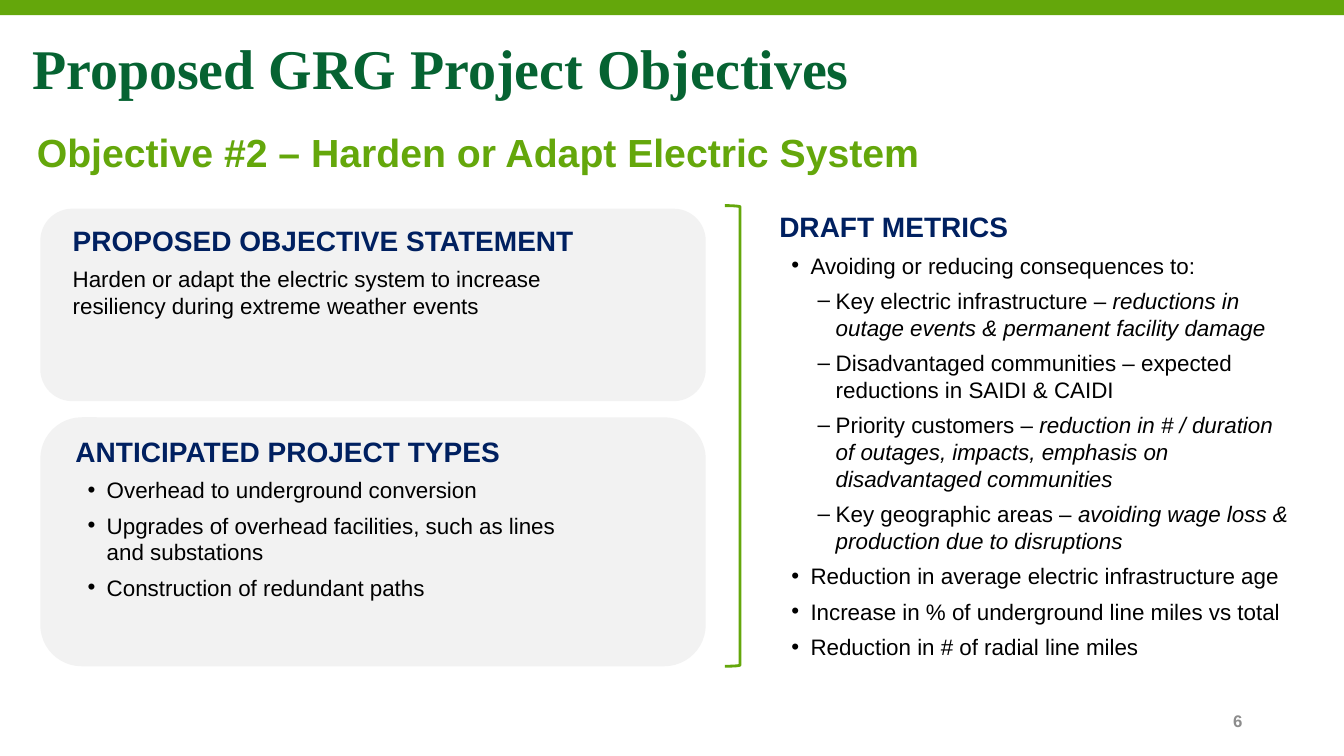
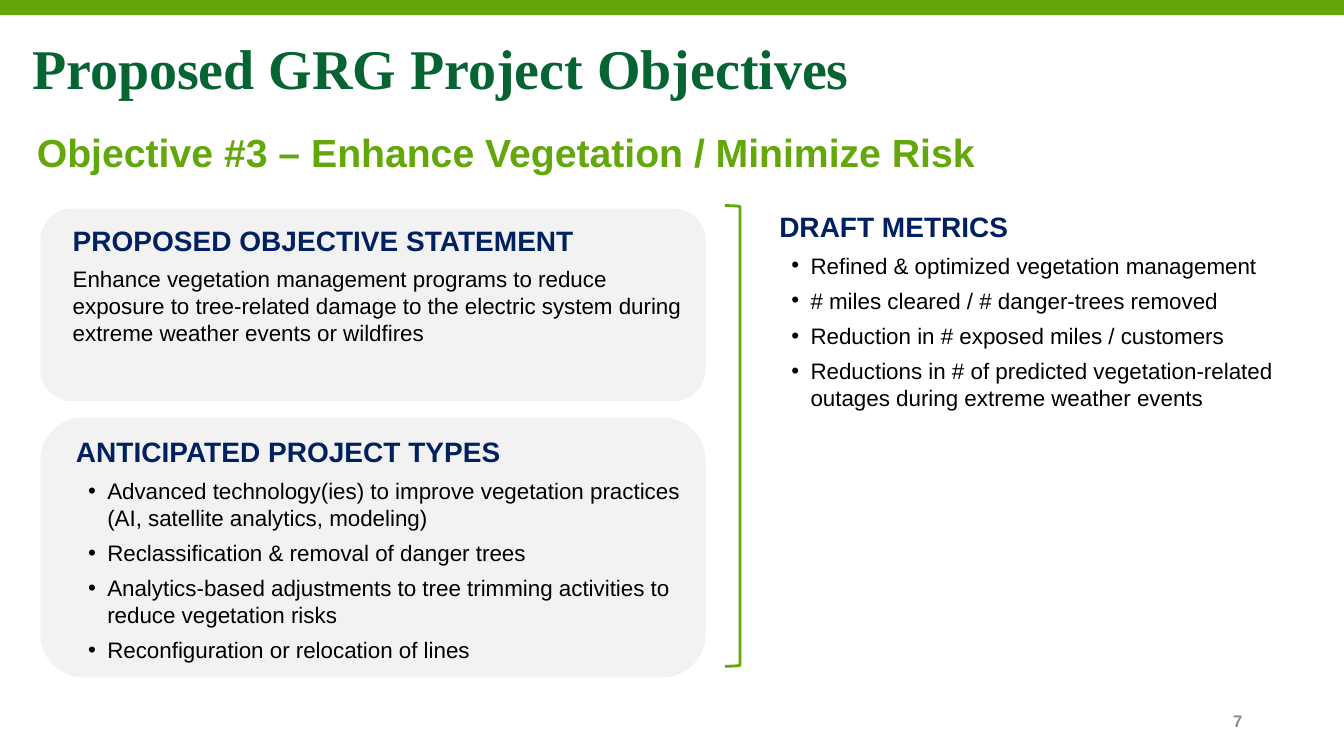
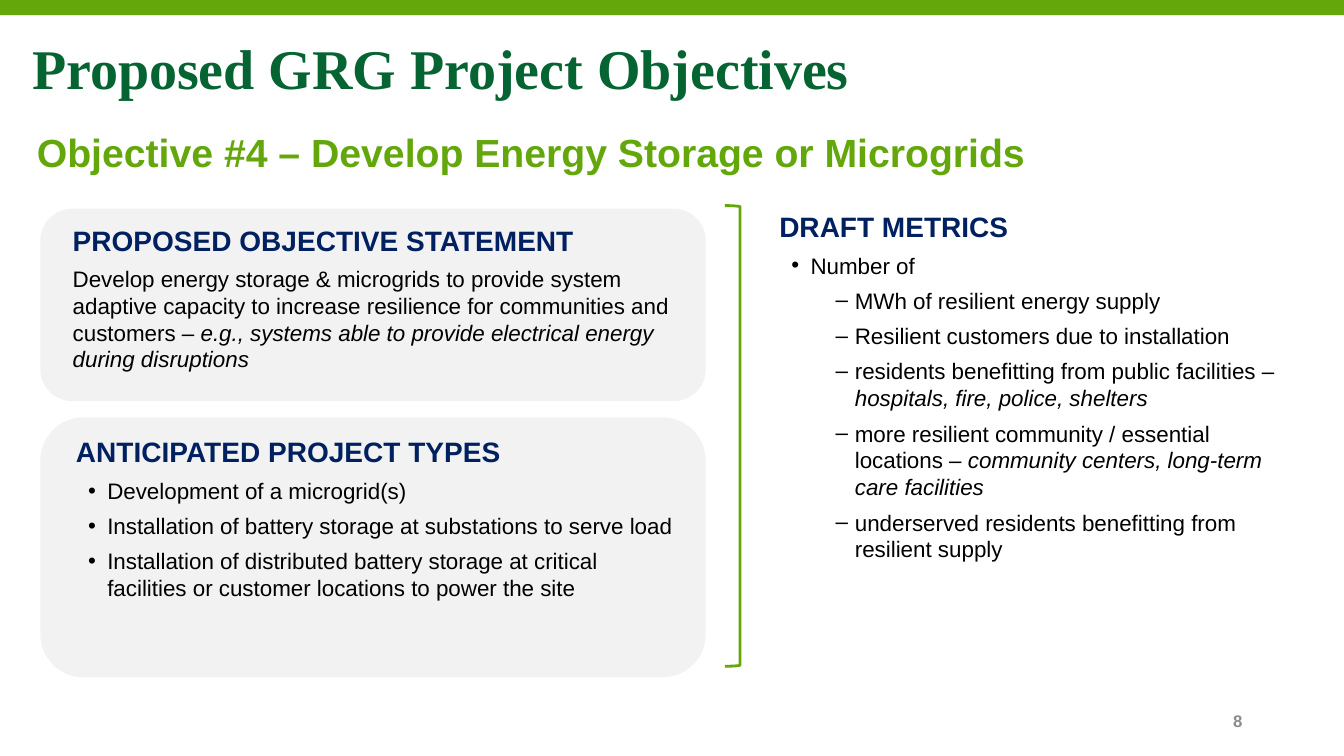
from copy import deepcopy

from lxml import etree
from pptx import Presentation
from pptx.dml.color import RGBColor
from pptx.enum import shapes, text
from pptx.oxml import ns
from pptx.util import Inches, Pt

COLORS = {
    "green": "64A70B",
    "title": "066332",
    "navy": "002060",
    "panel": "F2F2F2",
    "body": "000000",
    "number": "8C8C8C",
}
BODY_FONT = "Arial"
TITLE_FONT = "Times New Roman"
SLIDE_WIDTH, SLIDE_HEIGHT = 13.33, 7.5
TEXT_INDENT = 0.13
BULLET, DASH = "•", "–"

OBJECTIVES = [
    {
        "number": 6,
        "subtitle": "Objective #2 – Harden or Adapt Electric System",
        "statement": "Harden or adapt the electric system to increase \nresiliency during extreme weather events",
        "types_height": 2.47,
        "types": [
            "Overhead to underground conversion",
            "Upgrades of overhead facilities, such as lines \nand substations",
            "Construction of redundant paths",
        ],
        "dash_indent": (0.69, -0.18),
        "metrics": [
            (BULLET, "Avoiding or reducing consequences to:"),
            (DASH, "Key electric infrastructure – ", "reductions in outage events & permanent facility damage"),
            (DASH, "Disadvantaged communities – expected reductions in SAIDI & CAIDI"),
            (DASH, "Priority customers – ",
             "reduction in # / duration of outages, impacts, emphasis on disadvantaged communities"),
            (DASH, "Key geographic areas – ", "avoiding wage loss & production due to disruptions"),
            (BULLET, "Reduction in average electric infrastructure age"),
            (BULLET, "Increase in % of underground line miles vs total"),
            (BULLET, "Reduction in # of radial line miles"),
        ],
    },
    {
        "number": 7,
        "subtitle": "Objective #3 – Enhance Vegetation / Minimize Risk",
        "statement": "Enhance vegetation management programs to reduce exposure to tree-related damage "
                     "to the electric system during extreme weather events or wildfires",
        "types_height": 2.58,
        "types": [
            "Advanced technology(ies) to improve vegetation practices (AI, satellite analytics, modeling)",
            "Reclassification & removal of danger trees",
            "Analytics-based adjustments to tree trimming activities to reduce vegetation risks",
            "Reconfiguration or relocation of lines",
        ],
        "dash_indent": (0.69, -0.18),
        "metrics": [
            (BULLET, "Refined & optimized vegetation management"),
            (BULLET, "# miles cleared / # danger-trees removed"),
            (BULLET, "Reduction in # exposed miles / customers"),
            (BULLET, "Reductions in # of predicted vegetation-related outages during extreme weather events"),
        ],
    },
    {
        "number": 8,
        "subtitle": "Objective #4 – Develop Energy Storage or Microgrids",
        "statement": "Develop energy storage & microgrids to provide system adaptive capacity "
                     "to increase resilience for communities and customers – ",
        "example": "e.g., systems able to provide electrical energy during disruptions",
        "types_height": 2.58,
        "types": [
            "Development of a microgrid(s)",
            "Installation of battery storage at substations to serve load",
            "Installation of distributed battery storage at critical facilities "
            "or customer locations to power the site",
        ],
        "dash_indent": (0.88, -0.19),
        "metrics": [
            (BULLET, "Number of"),
            (DASH, "MWh of resilient energy supply"),
            (DASH, "Resilient customers due to installation"),
            (DASH, "residents benefitting from public facilities – ", "hospitals, fire, police, shelters"),
            (DASH, "more resilient community / essential locations – ",
             "community centers, long-term care facilities"),
            (DASH, "underserved residents benefitting from resilient supply"),
        ],
    },
]


def format_run(run, size, color, bold=False, italic=False, font=BODY_FONT):
    run.font.name = font
    run.font.size = Pt(size)
    run.font.bold = bold
    run.font.italic = italic
    run.font.color.rgb = RGBColor.from_string(COLORS[color])


def add_panel(slide, kind, box, fill=None, line=None):
    shape = slide.shapes.add_shape(kind, *map(Inches, box))
    shape.shadow.inherit = False
    if fill:
        shape.fill.solid()
        shape.fill.fore_color.rgb = RGBColor.from_string(COLORS[fill])
    else:
        shape.fill.background()
    if line:
        shape.line.color.rgb = RGBColor.from_string(COLORS[line])
        shape.line.width = Pt(2)
    else:
        shape.line.fill.background()
    shape.text_frame.word_wrap = True
    shape.text_frame.vertical_anchor = text.MSO_ANCHOR.TOP
    return shape


def set_indent(paragraph, left, first=0, marker=None):
    properties = paragraph._p.get_or_add_pPr()
    properties.set("marL", str(Inches(left)))
    properties.set("indent", str(Inches(first)))
    if marker:
        etree.SubElement(properties, ns.qn("a:buFont")).set("typeface", BODY_FONT)
        etree.SubElement(properties, ns.qn("a:buChar")).set("char", marker)


def write_heading(paragraph, heading, size, color):
    set_indent(paragraph, TEXT_INDENT)
    paragraph.alignment = text.PP_ALIGN.LEFT
    paragraph.space_after = Pt(6)
    paragraph.text = heading
    format_run(paragraph.runs[0], size, color, bold=True)


def add_body(text_frame, indent, marker, body, remark=None):
    paragraph = text_frame.add_paragraph()
    paragraph.text = body
    paragraph.level = int(marker == DASH)
    set_indent(paragraph, *indent, marker)
    paragraph.alignment = text.PP_ALIGN.LEFT
    paragraph.space_after = Pt(6)
    for run in paragraph.runs:
        format_run(run, 16, "body")
    for line_break in paragraph._p.findall(ns.qn("a:br")):
        line_break.insert(0, deepcopy(paragraph.runs[0]._r.rPr))
    if remark:
        run = paragraph.add_run()
        run.text = remark
        format_run(run, 16, "body", italic=True)


def add_section(slide, box, heading, items, dash_indent=None, fill=None):
    text_frame = add_panel(slide, shapes.MSO_SHAPE.ROUNDED_RECTANGLE, box, fill).text_frame
    write_heading(text_frame.paragraphs[0], heading, 20, "navy")
    indents = {None: (TEXT_INDENT, 0), BULLET: (0.44, -0.19), DASH: dash_indent}
    for marker, *parts in items:
        add_body(text_frame, indents[marker], marker, *parts)


def add_label(slide, box, label, alignment, **style):
    text_frame = slide.shapes.add_textbox(*map(Inches, box)).text_frame
    text_frame.word_wrap = True
    text_frame.vertical_anchor = text.MSO_ANCHOR.MIDDLE
    paragraph = text_frame.paragraphs[0]
    paragraph.text = label
    paragraph.alignment = alignment
    format_run(paragraph.runs[0], bold=True, **style)


def add_frame(slide, subtitle, number):
    add_panel(slide, shapes.MSO_SHAPE.RECTANGLE, (0, 0, SLIDE_WIDTH, 0.15), fill="green")
    add_label(slide, (0.22, 0.08, 10.22, 1.17), "Proposed GRG Project Objectives",
              text.PP_ALIGN.LEFT, size=40, color="title", font=TITLE_FONT)
    banner = add_panel(slide, shapes.MSO_SHAPE.ROUNDED_RECTANGLE, (0.11, 1.2, 12.58, 0.58))
    write_heading(banner.text_frame.paragraphs[0], subtitle, 28, "green")
    add_label(slide, (9.42, 6.95, 3, 0.4), str(number),
              text.PP_ALIGN.RIGHT, size=12, color="number")


def add_objective_slide(presentation, objective):
    slide = presentation.slides.add_slide(presentation.slide_layouts[6])
    add_frame(slide, objective["subtitle"], objective["number"])
    add_section(slide, (0.4, 4.14, 6.6, objective["types_height"]), "ANTICIPATED PROJECT TYPES",
                [(BULLET, item) for item in objective["types"]], fill="panel")
    add_section(slide, (0.4, 2.07, 6.6, 1.91), "PROPOSED OBJECTIVE STATEMENT",
                [(None, objective["statement"], objective.get("example"))], fill="panel")
    add_panel(slide, shapes.MSO_SHAPE.RIGHT_BRACKET, (7.19, 2.04, 0.15, 4.57), line="green")
    add_section(slide, (7.26, 1.79, 5.88, 4.93), "DRAFT METRICS",
                objective["metrics"], objective["dash_indent"])


def main():
    presentation = Presentation()
    presentation.slide_width = Inches(SLIDE_WIDTH)
    presentation.slide_height = Inches(SLIDE_HEIGHT)
    for objective in OBJECTIVES:
        add_objective_slide(presentation, objective)
    presentation.save("out.pptx")


if __name__ == "__main__":
    main()
